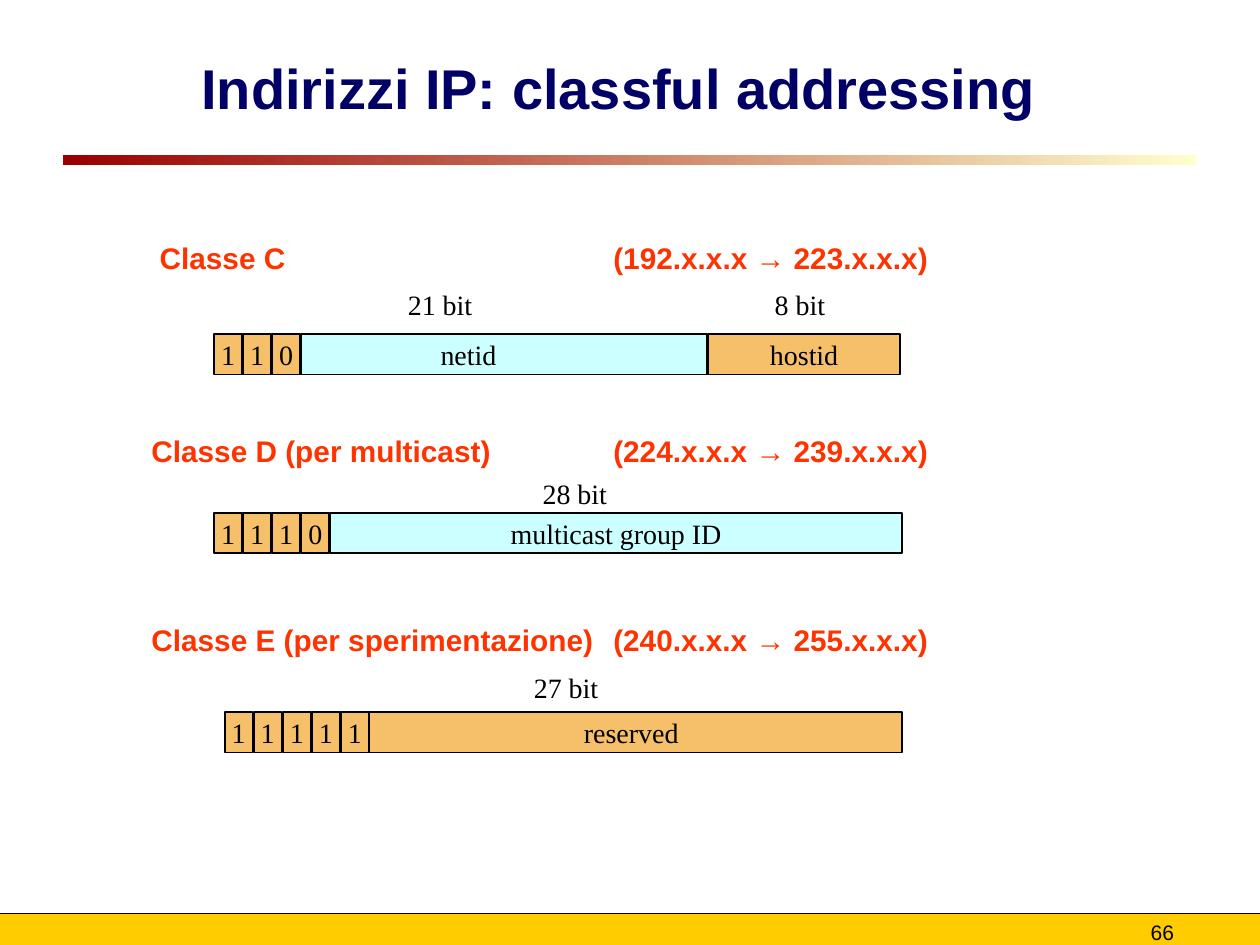
from dataclasses import dataclass

from lxml.etree import SubElement
from pptx import Presentation
from pptx.dml.color import RGBColor as Rgb
from pptx.enum.shapes import MSO_CONNECTOR as Connector, MSO_SHAPE as Shape
from pptx.enum.text import MSO_ANCHOR as Anchor, PP_ALIGN as Align
from pptx.oxml.ns import qn
from pptx.shapes.autoshape import Shape as AutoShape
from pptx.slide import Slide
from pptx.text.text import TextFrame
from pptx.util import Pt


@dataclass(frozen=True)
class TextStyle:
    font: str
    size: float
    color: Rgb
    bold: bool = False


@dataclass(frozen=True)
class Theme:
    black: Rgb = Rgb(0x00, 0x00, 0x00)
    prefix: Rgb = Rgb(0xF6, 0xBF, 0x69)
    network: Rgb = Rgb(0xCC, 0xFF, 0xFF)
    footer: Rgb = Rgb(0xFF, 0xCC, 0x00)
    rule_start: Rgb = Rgb(0x99, 0x00, 0x00)
    rule_end: Rgb = Rgb(0xFF, 0xFF, 0xCC)
    title: TextStyle = TextStyle("Arial", 32, Rgb(0x00, 0x00, 0x66), True)
    heading: TextStyle = TextStyle("Arial", 17, Rgb(0xFF, 0x33, 0x00), True)
    page: TextStyle = TextStyle("Arial", 12, black)
    field: TextStyle = TextStyle("Times New Roman", 16, black)


@dataclass(frozen=True)
class Field:
    name: str
    left: float
    width: float
    fill: Rgb
    size_label: str
    label_left: float
    right_inset: float = 0


@dataclass(frozen=True)
class AddressClass:
    name: str
    addresses: str
    heading_left: float
    heading_top: float
    label_top: float
    bar_left: float
    bar_top: float
    bits: str
    fields: tuple[Field, ...]


THEME = Theme()
BIT_WIDTH, BIT_PITCH, BAR_HEIGHT = 16, 16.6, 23
ADDRESSES_LEFT = 344

CLASSES = (
    AddressClass("Classe C", "(192.x.x.x → 223.x.x.x)", 84.7, 134, 160.5, 122.4, 191, "110", (
        Field("netid", 172.2, 232, THEME.network, "21 bit", 226, 41),
        Field("hostid", 404.5, 110, THEME.prefix, "8 bit", 435.6),
    )),
    AddressClass("Classe D (per multicast)", "(224.x.x.x → 239.x.x.x)", 80, 244, 268.5, 122.4, 293,
                 "1110", (Field("multicast group ID", 188.6, 327, THEME.network, "28 bit", 303),)),
    AddressClass("Classe E (per sperimentazione)", "(240.x.x.x → 255.x.x.x)", 80, 352, 379.5, 128.4, 407,
                 "11111", (Field("reserved", 206, 309.5, THEME.prefix, "27 bit", 298),)),
)


def write(frame: TextFrame, text: str, style: TextStyle, align: Align = Align.LEFT, tab: float = 0) -> None:
    paragraph = frame.paragraphs[0]
    paragraph.text = text
    paragraph.alignment = align
    if tab:
        tabs = SubElement(paragraph._p.get_or_add_pPr(), qn("a:tabLst"))
        SubElement(tabs, qn("a:tab"), pos=str(Pt(tab)), algn="l")
    font = paragraph.font
    font.name, font.size, font.bold = style.font, Pt(style.size), style.bold
    font.color.rgb = style.color


def add_text(slide: Slide, left: float, top: float, width: float, height: float, wrap: bool = True) -> TextFrame:
    frame = slide.shapes.add_textbox(Pt(left), Pt(top), Pt(width), Pt(height)).text_frame
    frame.word_wrap = wrap
    return frame


def add_bar(slide: Slide, left: float, top: float, width: float, height: float) -> AutoShape:
    bar = slide.shapes.add_shape(Shape.RECTANGLE, Pt(left), Pt(top), Pt(width), Pt(height))
    bar.shadow.inherit = False
    bar.line.fill.background()
    return bar


def add_cell(slide: Slide, text: str, left: float, top: float, width: float, fill: Rgb,
             right_inset: float = 0) -> None:
    cell = add_bar(slide, left, top, width, BAR_HEIGHT)
    cell.fill.solid()
    cell.fill.fore_color.rgb = fill
    cell.line.color.rgb = THEME.black
    cell.line.width = Pt(1)
    frame = cell.text_frame
    frame.word_wrap = False
    frame.vertical_anchor = Anchor.MIDDLE
    frame.margin_left = frame.margin_top = frame.margin_bottom = 0
    frame.margin_right = Pt(right_inset)
    write(frame, text, THEME.field, Align.CENTER)


def add_address_class(slide: Slide, item: AddressClass) -> None:
    heading = add_text(slide, item.heading_left, item.heading_top, 560, 43)
    heading.margin_left = heading.margin_right = Pt(6.5)
    heading.margin_top = heading.margin_bottom = Pt(3)
    write(heading, f"{item.name}\t{item.addresses}", THEME.heading, tab=ADDRESSES_LEFT - item.heading_left)
    for field in item.fields:
        label = add_text(slide, field.label_left, item.label_top, 52, 26.5, wrap=False)
        write(label, field.size_label, THEME.field)
        add_cell(slide, field.name, field.left, item.bar_top, field.width, field.fill, field.right_inset)
    for index, bit in enumerate(item.bits):
        add_cell(slide, bit, item.bar_left + index * BIT_PITCH, item.bar_top, BIT_WIDTH, THEME.prefix)


def add_frame(slide: Slide) -> None:
    footer = add_bar(slide, 0, 522, 720, 18)
    footer.fill.solid()
    footer.fill.fore_color.rgb = THEME.footer
    rule = add_bar(slide, 36, 88.5, 648, 5.75)
    rule.fill.gradient()
    rule.fill.gradient_angle = 0
    for stop, color in zip(rule.fill.gradient_stops, (THEME.rule_start, THEME.rule_end)):
        stop.color.rgb = color
    edge = slide.shapes.add_connector(Connector.STRAIGHT, Pt(0), Pt(522), Pt(720), Pt(522))
    edge.line.color.rgb = THEME.black
    edge.line.width = Pt(0.75)
    SubElement(edge._element.spPr, qn("a:effectLst"))
    write(add_text(slide, 612, 522, 66, 18), "66", THEME.page, Align.RIGHT)
    title = add_text(slide, 108, 20, 558, 60)
    title.vertical_anchor = Anchor.MIDDLE
    write(title, "Indirizzi IP: classful addressing", THEME.title)


def main() -> None:
    """Build the slide on classful IP addressing."""
    deck = Presentation()
    deck.slide_width, deck.slide_height = Pt(720), Pt(540)
    slide = deck.slides.add_slide(deck.slide_layouts[6])
    add_frame(slide)
    for item in CLASSES:
        add_address_class(slide, item)
    deck.save("out.pptx")


if __name__ == "__main__":
    main()
